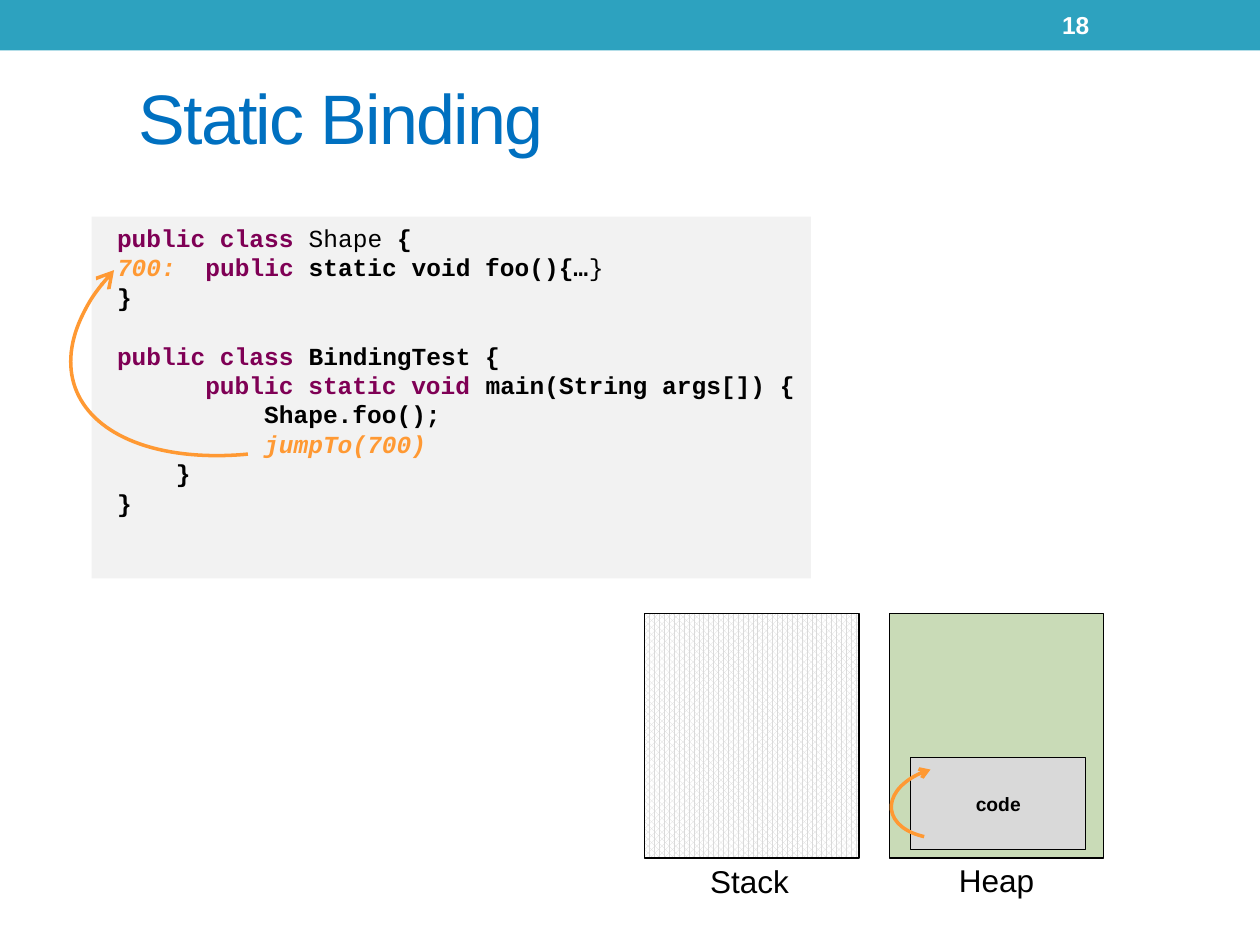
from lxml import etree
from pptx import Presentation
from pptx import util as u
from pptx.dml.color import RGBColor
from pptx.enum import dml, shapes, text
from pptx.oxml.ns import qn

COLORS = {
    "band": "2DA2BF", "heap": "C9DBB7", "dots": "DADADA", "white": "FFFFFF",
    "code": "D9D9D9", "panel": "F2F2F2", "title": "0070C0", "black": "000000",
    "keyword": "7F0055", "jump": "FF9933",
}


def add_run(paragraph, content, size=14, font="Arial", color="black", bold=False, italic=False):
    run = paragraph.add_run()
    run.text = content
    run.font.size = u.Pt(size)
    run.font.name = font
    run.font.bold = bold
    run.font.italic = italic
    run.font.color.rgb = RGBColor.from_string(COLORS[color])
    return run


def add_shape(kind, box, fill=None, line=None, width=0.75):
    shape = slide.shapes.add_shape(kind, *map(u.Cm, box))
    shape.shadow.inherit = False
    if fill:
        shape.fill.solid()
        shape.fill.fore_color.rgb = RGBColor.from_string(COLORS[fill])
    else:
        shape.fill.background()
    if line:
        shape.line.color.rgb = RGBColor.from_string(COLORS[line])
        shape.line.width = u.Pt(width)
    else:
        shape.line.fill.background()
    return shape


presentation = Presentation()
presentation.slide_width = u.Cm(25.4)
presentation.slide_height = u.Cm(19.05)
slide = presentation.slides.add_slide(presentation.slide_layouts[5])
rectangle = shapes.MSO_SHAPE.RECTANGLE

add_shape(rectangle, (0, 0, 25.4, 1.02), "band")
add_shape(rectangle, (17.93, 12.37, 4.32, 4.93), "heap", "black")
stack = add_shape(rectangle, (13, 12.37, 4.32, 4.93), "white", "black")
stack.fill.patterned()
stack.fill.pattern = dml.MSO_PATTERN.PERCENT_75
stack.fill.fore_color.rgb = RGBColor.from_string(COLORS["dots"])
stack.fill.back_color.rgb = RGBColor.from_string(COLORS["white"])

code_block = add_shape(rectangle, (18.36, 15.27, 3.53, 1.85), "code", "black")
code_block.text_frame.vertical_anchor = text.MSO_ANCHOR.MIDDLE
paragraph = code_block.text_frame.paragraphs[0]
paragraph.alignment = text.PP_ALIGN.CENTER
add_run(paragraph, "code", size=11, bold=True)

add_shape(rectangle, (1.85, 4.37, 14.5, 7.29), "panel")

title = slide.shapes.title
title.left, title.top, title.width, title.height = map(u.Cm, (2.54, 0.76, 21.59, 3.18))
title.text_frame.vertical_anchor = text.MSO_ANCHOR.MIDDLE
paragraph = title.text_frame.paragraphs[0]
paragraph.alignment = text.PP_ALIGN.LEFT
title_run = add_run(paragraph, "Static Binding", size=40, color="title")
title_run.font._element.set("spc", "-100")

captions = [
    ("18", (21.16, 0.05, 2.97, 0.91), text.PP_ALIGN.LEFT, dict(color="white", bold=True)),
    ("Heap", (17.93, 17.22, 4.32, 1.02), text.PP_ALIGN.CENTER, dict(size=18)),
    ("Stack", (12.95, 17.25, 4.32, 1.02), text.PP_ALIGN.CENTER, dict(size=18)),
]
for content, box, alignment, style in captions:
    caption = slide.shapes.add_textbox(*map(u.Cm, box))
    caption.text_frame.word_wrap = True
    caption.text_frame.vertical_anchor = text.MSO_ANCHOR.MIDDLE
    paragraph = caption.text_frame.paragraphs[0]
    paragraph.alignment = alignment
    add_run(paragraph, content, **style)

plain = dict(bold=False)
keyword = dict(color="keyword")
jump = dict(color="jump", italic=True)
code_lines = [
    [("public class ", keyword), ("Shape", plain), (" {", {})],
    [("700:  ", jump), ("public", keyword), (" static void foo(){…", {}), ("}", plain)],
    [("}", {})],
    [("public class ", keyword), ("BindingTest {", {})],
    [("      public static void", keyword), (" main(String args[]) {", {})],
    [("          Shape.foo();", {})],
    [("          jumpTo(700)", jump)],
    [("    }", {})],
    [("}", {})],
]
second_class = 3
line_height = u.Pt(16.8)
listing = slide.shapes.add_textbox(*map(u.Cm, (2.11, 4.37, 16.87, 6.25)))
listing.text_frame.word_wrap = True
for index, runs in enumerate(code_lines):
    paragraph = listing.text_frame.add_paragraph() if index else listing.text_frame.paragraphs[0]
    paragraph.line_spacing = line_height
    if index == second_class:
        paragraph.space_before = line_height
    for content, style in runs:
        add_run(paragraph, content, **{"font": "Courier New", "bold": True, **style})

jump_arcs = [
    ((1.22, 3.43, 9.88, 5.41), 160.1, (186.59, 18.02), "lg"),
    ((17.96, 15.44, 2.39, 1.45), 172.3, (188.75, 39.8), "med"),
]
for box, rotation, angles, head_size in jump_arcs:
    arc = add_shape(shapes.MSO_SHAPE.ARC, box, line="jump", width=2)
    arc.rotation = rotation
    arc.adjustments[0], arc.adjustments[1] = angles
    etree.SubElement(arc.line._get_or_add_ln(), qn("a:tailEnd"),
                     type="arrow", w=head_size, len=head_size)

presentation.save("out.pptx")
